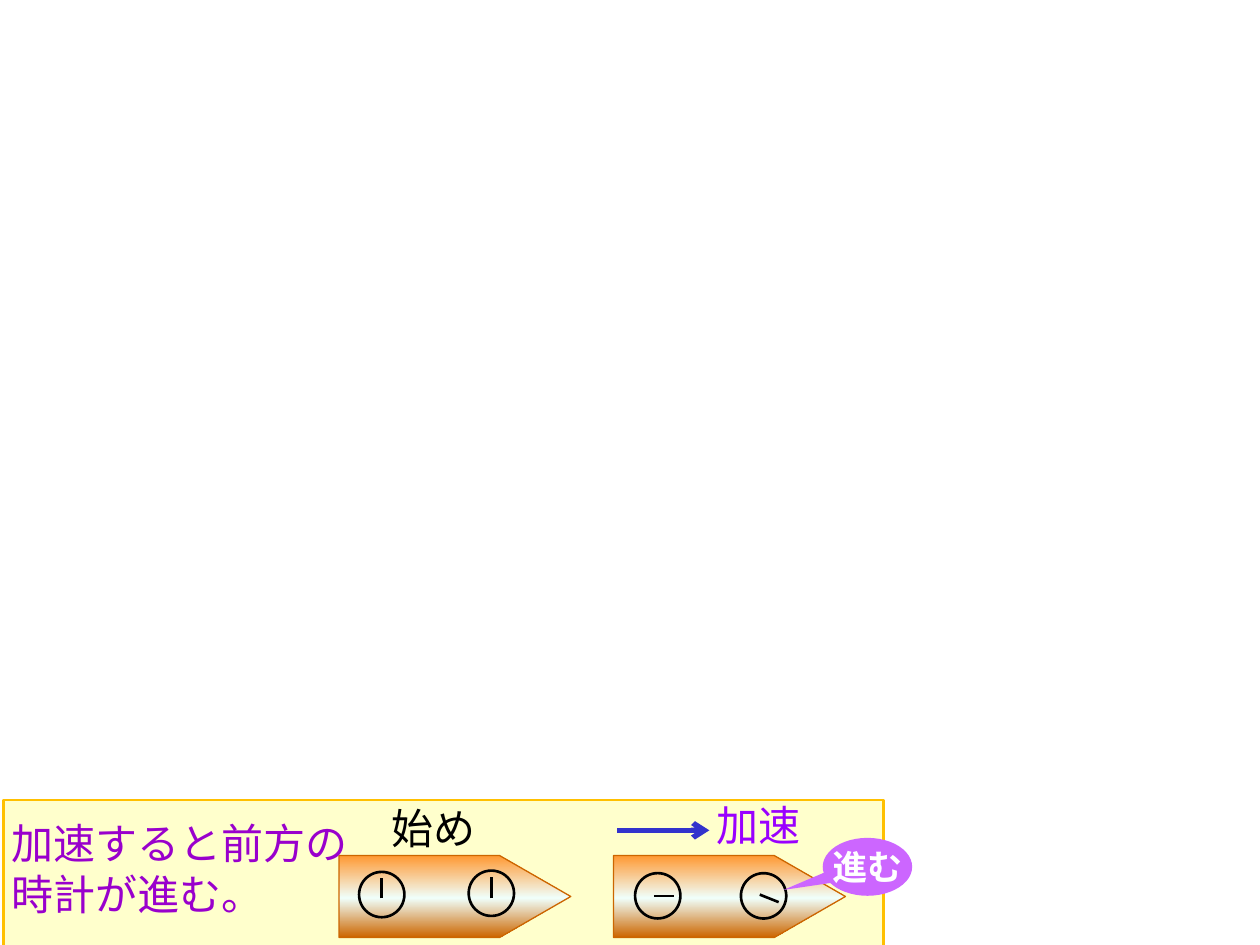
from copy import deepcopy
from lxml import etree
from pptx import Presentation
from pptx.dml.color import RGBColor
from pptx.enum.shapes import MSO_CONNECTOR, MSO_SHAPE
from pptx.enum.text import MSO_ANCHOR, MSO_AUTO_SIZE, PP_ALIGN
from pptx.oxml.ns import qn
from pptx.util import Inches, Pt

RECTANGLE = MSO_SHAPE.RECTANGLE
ELLIPSE = MSO_SHAPE.OVAL
ROCKET = MSO_SHAPE.PENTAGON
CALLOUT = MSO_SHAPE.OVAL_CALLOUT
STRAIGHT = MSO_CONNECTOR.STRAIGHT
MIDDLE = MSO_ANCHOR.MIDDLE
CENTER = PP_ALIGN.CENTER
FIT_SHAPE = MSO_AUTO_SIZE.SHAPE_TO_FIT_TEXT

FONT = "Times New Roman"
BLACK = "000000"
PANEL = (0.03, 6.35, 6.98, 1.16)
ROCKET_LEFTS = (4.87, 2.69)
ROCKET_TOP, ROCKET_WIDTH, ROCKET_HEIGHT = 6.79, 1.84, 0.65
ROCKET_STOPS = ((0, "FF9933"), (0.52, "F0FFFB"), (1, "CC6600"))
CLOCK_SIZE = 0.36
CLOCKS = (
    (2.85, 6.92, 0, (3.03, 7.13, 3.03, 6.97)),
    (3.72, 6.91, 0, (3.9, 7.13, 3.9, 6.96)),
    (5.88, 6.93, 110, (6.03, 7.1, 6.18, 7.16)),
    (5.04, 6.93, 90, (5.19, 7.11, 5.35, 7.11)),
)
LABELS = (
    (("加速すると前方の", "時計が進む。"), (-0.01, 6.44, 3.09, 0.91), "9900CC"),
    (("加速",), (5.59, 6.3, 1.3, 0.5), "9900FF"),
    (("始め",), (3.01, 6.32, 1.11, 0.5), BLACK),
)
ACCELERATION = (4.9, 6.59, 5.63, 6.59)
CALLOUT_BOX = (6.53, 6.65, 0.71, 0.46)


def color(value):
    return RGBColor.from_string(value)


def inches(values):
    return [Inches(value) for value in values]


def add_shape(shapes, kind, box, fill=None, line=None, width=1.5):
    shape = shapes.add_shape(kind, *inches(box))
    shape.shadow.inherit = False
    if fill:
        shape.fill.solid()
        shape.fill.fore_color.rgb = color(fill)
    else:
        shape.fill.background()
    if line:
        shape.line.color.rgb = color(line)
        shape.line.width = Pt(width)
    else:
        shape.line.fill.background()
    return shape


def add_line(shapes, ends, line, width, arrow=None):
    connector = shapes.add_connector(STRAIGHT, *inches(ends))
    connector.line.color.rgb = color(line)
    connector.line.width = Pt(width)
    if arrow:
        etree.SubElement(connector.line._get_or_add_ln(), qn("a:tailEnd"), type=arrow)
    etree.SubElement(connector._element.spPr, qn("a:effectLst"))


def add_rocket(shapes, left):
    box = (left, ROCKET_TOP, ROCKET_WIDTH, ROCKET_HEIGHT)
    rocket = add_shape(shapes, ROCKET, box, line="CC6600", width=0.75)
    rocket.adjustments[0] = 0.868
    rocket.fill.gradient()
    rocket.fill.gradient_angle = 270
    stop_list = rocket._element.spPr.find(".//" + qn("a:gsLst"))
    stop_list.append(deepcopy(stop_list[-1]))
    for stop, (position, value) in zip(rocket.fill.gradient_stops, ROCKET_STOPS):
        stop.position = position
        stop.color.rgb = color(value)


def write(frame, lines, size, value, bold=False, alignment=None):
    for index, text in enumerate(lines):
        paragraph = frame.paragraphs[0] if index == 0 else frame.add_paragraph()
        paragraph.alignment = alignment
        run = paragraph.add_run()
        run.text = text
        run.font.name = FONT
        run.font.size = Pt(size)
        run.font.bold = bold
        run.font.color.rgb = color(value)


def add_label(shapes, lines, box, value):
    frame = shapes.add_textbox(*inches(box)).text_frame
    frame.word_wrap = True
    frame.auto_size = FIT_SHAPE
    write(frame, lines, 24, value)


def add_callout(shapes):
    callout = add_shape(shapes, CALLOUT, CALLOUT_BOX, fill="CC66FF")
    callout.adjustments[0] = -0.94
    callout.adjustments[1] = 0.399
    frame = callout.text_frame
    frame.word_wrap = False
    frame.vertical_anchor = MIDDLE
    write(frame, ("進む",), 20, "FFFFFF", True, CENTER)


def main():
    presentation = Presentation()
    presentation.slide_width = Inches(10)
    presentation.slide_height = Inches(7.5)
    slide = presentation.slides.add_slide(presentation.slide_layouts[6])
    shapes = slide.shapes.add_group_shape().shapes
    add_shape(shapes, RECTANGLE, PANEL, "FFFFCC", "FFC000")
    for left in ROCKET_LEFTS:
        add_rocket(shapes, left)
    for left, top, rotation, hand in CLOCKS:
        box = (left, top, CLOCK_SIZE, CLOCK_SIZE)
        add_shape(shapes, ELLIPSE, box, line=BLACK).rotation = rotation
        add_line(shapes, hand, BLACK, 1.5)
    for lines, box, value in LABELS:
        add_label(shapes, lines, box, value)
    add_line(shapes, ACCELERATION, "3333CC", 3, "arrow")
    add_callout(shapes)
    presentation.save("out.pptx")


if __name__ == "__main__":
    main()
